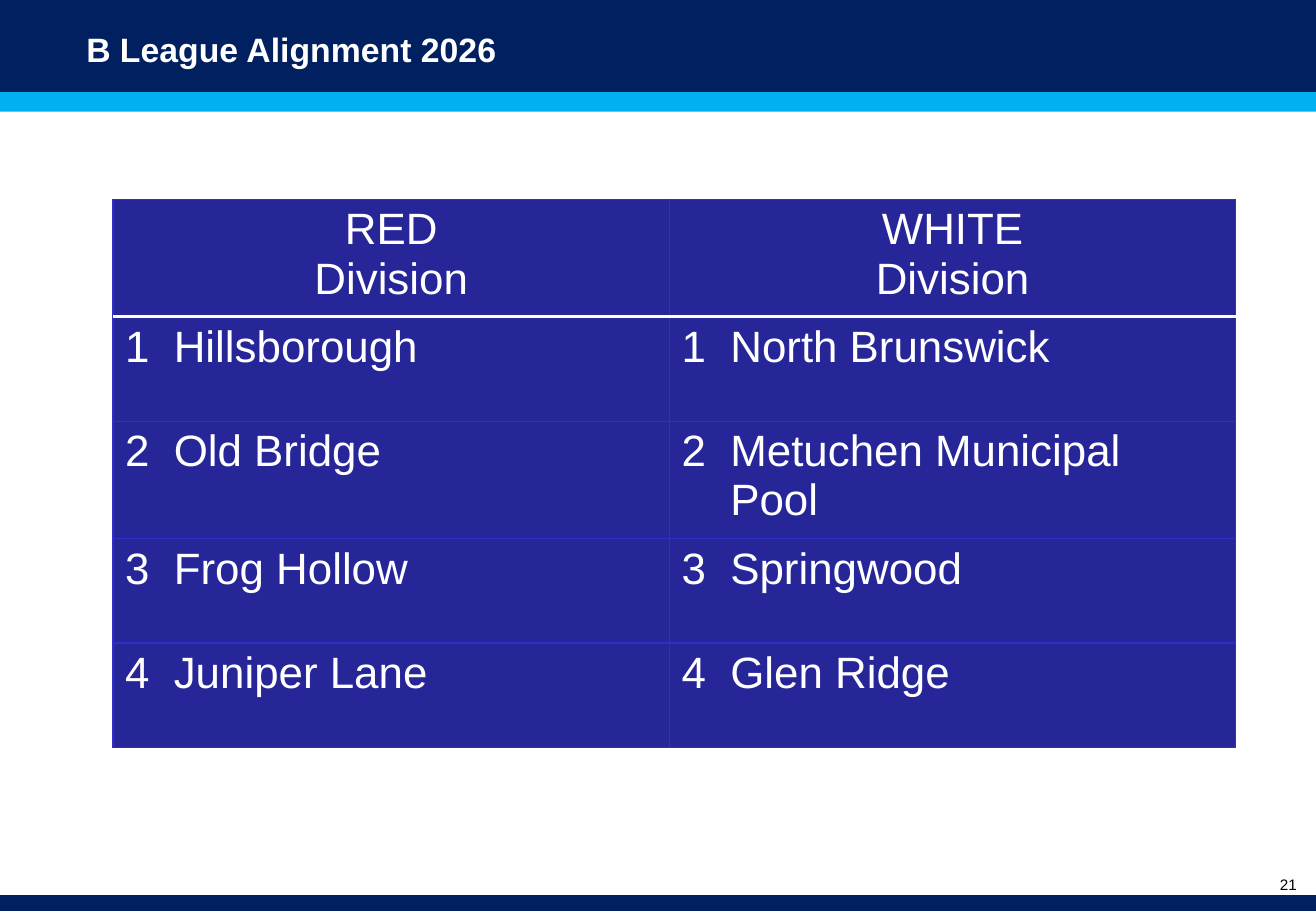
"""Builds the B League alignment slide with its two divisions."""
from lxml import etree
from pptx import Presentation
from pptx.dml.color import RGBColor
from pptx.enum.shapes import MSO_SHAPE
from pptx.enum.text import MSO_ANCHOR, PP_ALIGN
from pptx.oxml.ns import qn
from pptx.util import Inches, Pt

RECTANGLE = MSO_SHAPE.RECTANGLE
MIDDLE = MSO_ANCHOR.MIDDLE
LEFT, CENTER, RIGHT = PP_ALIGN.LEFT, PP_ALIGN.CENTER, PP_ALIGN.RIGHT
TITLE_ONLY = 5
FONT = "Arial"
COLORS = {
    "navy": "002060",
    "cyan": "00B0F0",
    "cell": "262699",
    "rule": "2E2ECB",
    "white": "FFFFFF",
    "black": "000000",
}
DIVISIONS = {
    "RED": ["Hillsborough", "Old Bridge", "Frog Hollow", "Juniper Lane"],
    "WHITE": ["North Brunswick", "Metuchen Municipal Pool", "Springwood", "Glen Ridge"],
}


class LeagueSlide:
    """Holds the style and the slide; lengths are percentages of the slide's size."""

    def __init__(self, deck):
        self.width, self.height = deck.slide_width, deck.slide_height
        self.slide = deck.slides.add_slide(deck.slide_layouts[TITLE_ONLY])

    def across(self, share):
        return round(self.width * share / 100)

    def down(self, share):
        return round(self.height * share / 100)

    def place(self, left, top, width, height):
        return self.across(left), self.down(top), self.across(width), self.down(height)

    def add_text(self, paragraph, text, size, color, align=LEFT, bold=False):
        paragraph.alignment = align
        run = paragraph.add_run()
        run.text = text
        run.font.name = FONT
        run.font.size = Pt(size)
        run.font.bold = bold
        run.font.color.rgb = RGBColor.from_string(COLORS[color])

    def band(self, top, height, color):
        strip = self.slide.shapes.add_shape(RECTANGLE, *self.place(0, top, 100, height))
        strip.shadow.inherit = False
        strip.fill.solid()
        strip.fill.fore_color.rgb = RGBColor.from_string(COLORS[color])
        strip.line.fill.background()

    def title(self, text, *area):
        heading = self.slide.shapes.title
        heading.left, heading.top, heading.width, heading.height = self.place(*area)
        heading.text_frame.vertical_anchor = MIDDLE
        self.add_text(heading.text_frame.paragraphs[0], text, 20, "white", bold=True)
        self.slide.shapes._spTree.append(heading._element)

    def page_number(self, text, *area):
        frame = self.slide.shapes.add_textbox(*self.place(*area)).text_frame
        frame.word_wrap = True
        self.add_text(frame.paragraphs[0], text, 9, "black", RIGHT)

    def border(self, cell, side, color, points):
        edge = etree.SubElement(cell._tc.get_or_add_tcPr(), qn(f"a:ln{side}"), w=str(Pt(points)))
        paint = etree.SubElement(edge, qn("a:solidFill"))
        etree.SubElement(paint, qn("a:srgbClr"), val=COLORS[color])

    def style_cell(self, cell, row):
        white_side = {0: "B", 1: "T"}.get(row)
        for side in "LRTB":
            if side == white_side:
                self.border(cell, side, "white", 2)
            else:
                self.border(cell, side, "rule", 0.75)
        cell.fill.solid()
        cell.fill.fore_color.rgb = RGBColor.from_string(COLORS["cell"])

    def division_table(self, divisions, left, top, column_widths, row_height):
        rows = 1 + max(len(clubs) for clubs in divisions.values())
        area = self.place(left, top, sum(column_widths), rows * row_height)
        table = self.slide.shapes.add_table(rows, len(divisions), *area).table
        for column, (division, clubs) in enumerate(divisions.items()):
            table.columns[column].width = self.across(column_widths[column])
            header = table.cell(0, column)
            self.style_cell(header, 0)
            frame = header.text_frame
            self.add_text(frame.paragraphs[0], division, 26, "white", CENTER)
            self.add_text(frame.add_paragraph(), "Division", 26, "white", CENTER)
            for rank, club in enumerate(clubs, 1):
                entry = table.cell(rank, column)
                self.style_cell(entry, rank)
                entry.margin_right = Inches(0.3)
                paragraph = entry.text_frame.paragraphs[0]
                hanging = paragraph._p.get_or_add_pPr()
                hanging.set("marL", str(Inches(0.4)))
                hanging.set("indent", str(-Inches(0.4)))
                self.add_text(paragraph, f"{rank}\t{club}", 26, "white")


def main():
    deck = Presentation()
    deck.slide_width, deck.slide_height = Inches(10.83), Inches(7.5)
    league = LeagueSlide(deck)
    league.band(0, 10.13, "navy")
    league.band(98.27, 1.73, "navy")
    league.band(10.13, 2.13, "cyan")
    league.title("B League Alignment 2026", 5.63, 1.73, 64.27, 7.2)
    league.page_number("21", 93.17, 95.47, 6.28, 4)
    league.division_table(DIVISIONS, 8.59, 21.87, (42.29, 43.03), 11.47)
    deck.save("out.pptx")


if __name__ == "__main__":
    main()
